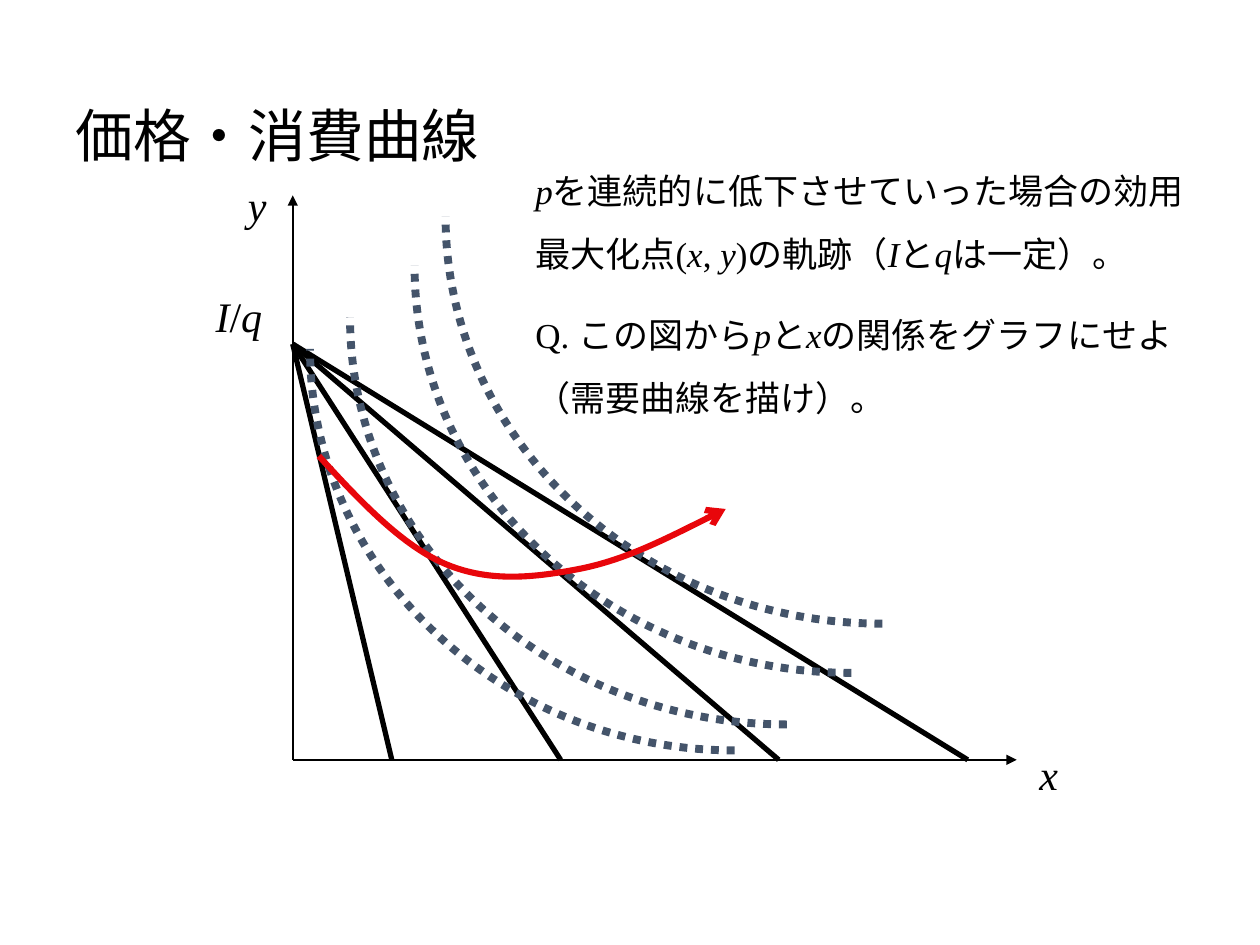
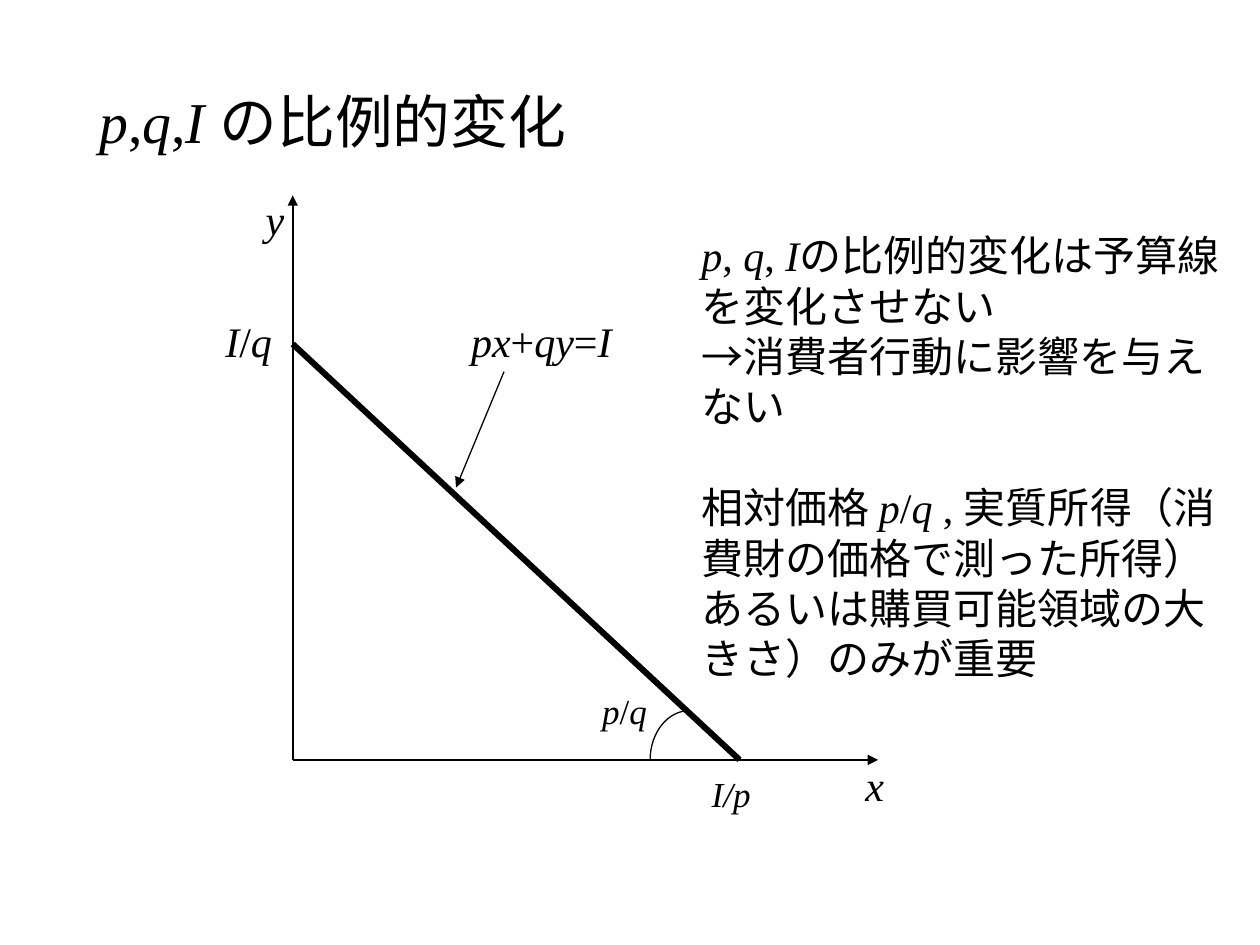
from dataclasses import dataclass

from lxml.etree import SubElement
from pptx import Presentation
from pptx.dml.color import RGBColor as Rgb
from pptx.enum.dml import MSO_LINE_DASH_STYLE as Dash
from pptx.enum.shapes import MSO_CONNECTOR as Link
from pptx.enum.text import MSO_ANCHOR as Anchor
from pptx.oxml.ns import qn
from pptx.util import Pt


@dataclass(frozen=True)
class Theme:
    ink: str = "000000"
    slate: str = "44546A"
    red: str = "E8060B"
    serif: str = "Times New Roman"
    sans: str = "Noto Sans CJK JP"
    head: int = 33
    large: int = 24
    small: int = 20


T = Theme()

# Content: *...* marks italic; boxes are left, top, width, height in points
Y_TOP, Y_CUT, BASE, LEFT = 111.6, 196.6, 434.2, 167.3

PRICE = {
    "title": ("価格・消費曲線", (36, 36, 312.5, 86.4)),
    "x_end": 581,
    "cuts": [320.4, 553, 223.9, 445],
    "width": 3,
    "labels": [
        ("*x*", (586.8, 424.1, 28, 36), T.large),
        ("*y*", (134.6, 98.8, 22.3, 36), T.large),
        ("*I*/*q*", (116.1, 162.4, 45.4, 36), T.large),
    ],
    "body": [
        "*p*を連続的に低下させていった場合の効用最大化点(*x*, *y*)の軌跡（*I*と*q*は一定）。",
        "Q. この図から*p*と*x*の関係をグラフにせよ（需要曲線を描け）。",
    ],
}
# Indifference curves: centre x, centre y, radius x, radius y
CURVES = [
    (419.8, 199.4, 242.6, 229.4),
    (449.6, 181.4, 249.6, 232.6),
    (486.5, 151.9, 249.6, 232.6),
    (504.2, 123.8, 249.6, 232.6),
]
# Path of best points: start, then two handles and an end for each piece
TRAIL = [
    (182.2, 260.6),
    (205.2, 285.8), (229, 311), (253.4, 321.8),
    (277.9, 332.6), (303.1, 330.5), (329.8, 325.4),
    (356.4, 320.4), (385.9, 305.3), (414.7, 290.9),
]

RATIO = {
    "title": ("*p*,*q*,*I *の比例的変化", (49.7, 28.8, 620.6, 85)),
    "x_end": 501.8,
    "cuts": [422.6],
    "width": 3.5,
    "labels": [
        ("*x*", (487.4, 430.6, 28, 36), T.large),
        ("*y*", (144.7, 107.3, 22.3, 36), T.large),
        ("*px*+*qy*=*I*", (262.1, 176.8, 102.2, 36), T.large),
        ("*I*/*q*", (121.7, 176.8, 45.4, 36), T.large),
        ("*p*/*q*", (337, 390.5, 45.4, 31), T.small),
        ("*I/p*", (399.6, 437.8, 56.9, 31), T.small),
    ],
    "body": [
        "*p*, *q*, *I*の比例的変化は予算線を変化させない",
        "→消費者行動に影響を与えない",
        "相対価格 *p*/*q* , 実質所得（消費財の価格で測った所得）"
        "あるいは購買可能領域の大きさ）のみが重要",
    ],
}
ANGLE = (393.8, BASE, 22.3, -28.1)


def write(slide, paras, box, size=T.large, face=T.serif, lead=None,
          gaps=(), anchor=Anchor.TOP):
    """Add a text box; gaps holds the space before each paragraph."""
    frame = slide.shapes.add_textbox(*map(Pt, box)).text_frame
    frame.word_wrap = True
    frame.vertical_anchor = anchor
    for i, text in enumerate(paras):
        para = frame.paragraphs[0] if i == 0 else frame.add_paragraph()
        if lead:
            para.line_spacing = lead
        if gaps:
            para.space_before = Pt(gaps[i])
        for j, part in enumerate(text.split("*")):
            if not part:
                continue
            run = para.add_run()
            run.text = part
            font = run.font
            font.name, font.size, font.italic = face, Pt(size), j % 2 == 1
            font.color.rgb = Rgb.from_string(T.ink)
            SubElement(font._element, qn("a:ea"), typeface=T.sans)


def style(shape, color, width, dash=None, tip=None):
    """Set the stroke, the arrowhead at its end, and no shadow."""
    line = shape.line
    line.color.rgb = Rgb.from_string(color)
    line.width = Pt(width)
    if dash:
        line.dash_style = dash
    if tip:
        SubElement(line._get_or_add_ln(), qn("a:tailEnd"), type=tip)
    SubElement(shape._element.spPr, qn("a:effectLst"))


def rule(slide, start, end, width, tip=None):
    ends = map(Pt, (*start, *end))
    line = slide.shapes.add_connector(Link.STRAIGHT, *ends)
    style(line, T.ink, width, tip=tip)


def trace(slide, knots, color, width, **form):
    """Draw a chain of cubic curves: a start, then three points for each."""
    pts = [(Pt(x), Pt(y)) for x, y in knots]
    build = slide.shapes.build_freeform(*pts[0], scale=1.0)
    build.add_line_segments(pts[1:], close=False)
    shape = build.convert_to_shape()
    # Turn every three straight steps into one cubic curve
    route = next(shape._element.iter(qn("a:path")))
    steps = route.findall(qn("a:lnTo"))
    for k in range(0, len(steps), 3):
        cubic = SubElement(route, qn("a:cubicBezTo"))
        for step in steps[k:k + 3]:
            cubic.append(step[0])
            route.remove(step)
    shape.fill.background()
    style(shape, color, width, **form)


def arc(cx, cy, rx, ry, pull=0.55):
    """Left quarter of an ellipse as one cubic curve."""
    left, foot = cx - rx, cy + ry
    return [(cx, foot), (cx - pull * rx, foot), (left, cy + pull * ry),
            (left, cy)]


def chart(deck, data, face=T.serif):
    """Add a slide with its title, axes, budget lines and labels."""
    slide = deck.slides.add_slide(deck.slide_layouts[6])
    title, box = data["title"]
    write(slide, [title], box, size=T.head, face=face, lead=0.9,
          anchor=Anchor.MIDDLE)
    for end in ((LEFT, Y_TOP), (data["x_end"], BASE)):
        rule(slide, (LEFT, BASE), end, 1.25, tip="triangle")
    for cut in data["cuts"]:
        rule(slide, (LEFT, Y_CUT), (cut, BASE), data["width"])
    for text, place, size in data["labels"]:
        write(slide, [text], place, size=size)
    return slide


def main():
    deck = Presentation()
    deck.slide_width, deck.slide_height = Pt(720), Pt(540)

    # Price and consumption curve
    slide = chart(deck, PRICE, face=T.sans)
    for curve in CURVES:
        trace(slide, arc(*curve), T.slate, 4.5, dash=Dash.ROUND_DOT)
    write(slide, PRICE["body"], (298.8, 81.6, 401.8, 161.3), size=T.small,
          lead=Pt(36), gaps=(0, 10))
    trace(slide, TRAIL, T.red, 3.5, tip="arrow")

    # Proportional change
    slide = chart(deck, RATIO)
    rule(slide, (288, 212.4), (260.6, 278.6), 0.75, tip="triangle")
    trace(slide, arc(*ANGLE), T.ink, 0.75)
    write(slide, RATIO["body"], (393.8, 127.7, 311.8, 269.3),
          lead=Pt(28.8), gaps=(0, 0, 28.8))

    deck.save("out.pptx")


if __name__ == "__main__":
    main()
